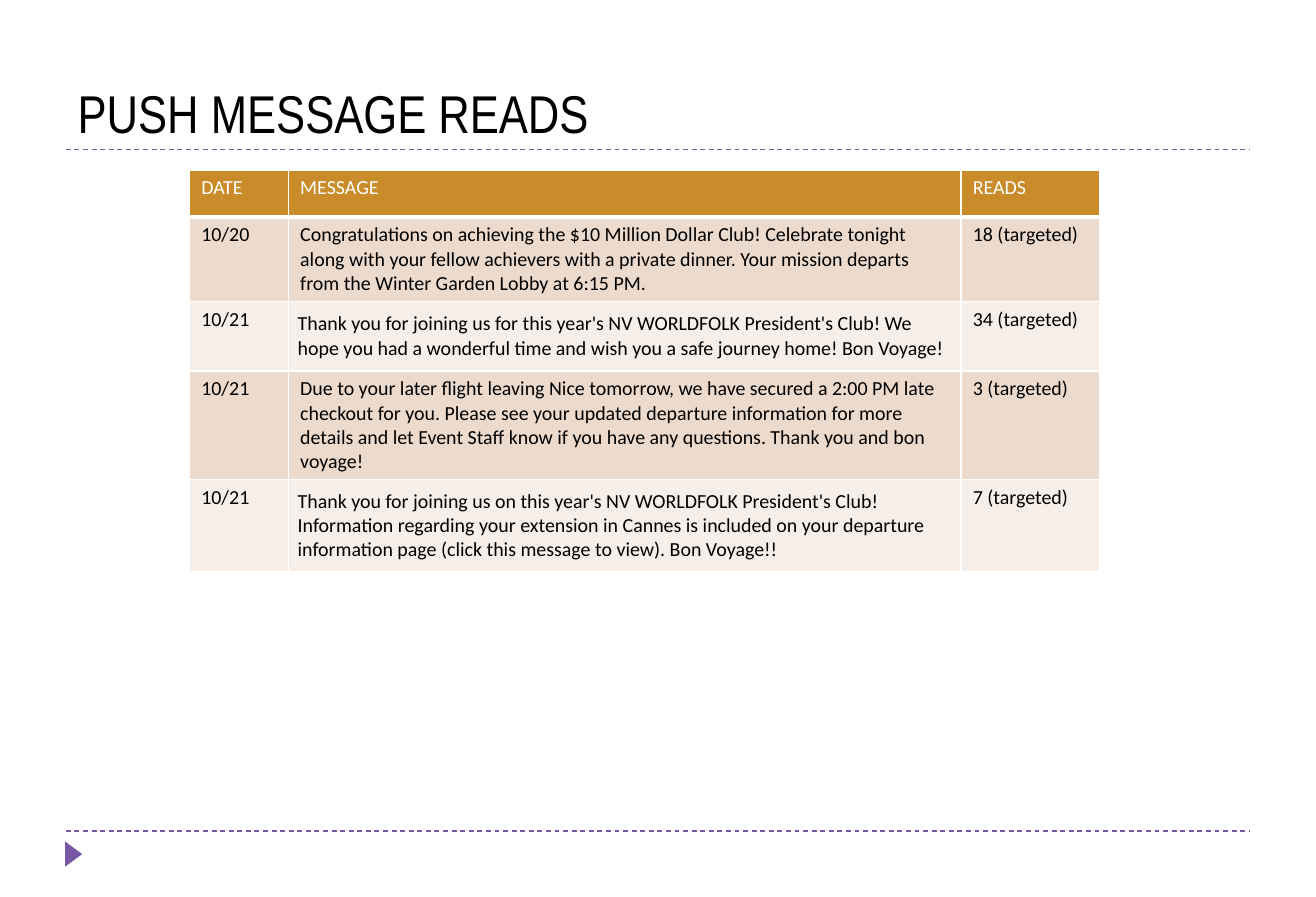
from dataclasses import dataclass

import pptx
import pptx.dml.color
import pptx.enum.dml
import pptx.enum.shapes
import pptx.enum.text
import pptx.oxml.ns
import pptx.util
from lxml import etree
from pptx.util import Cm

PURPLE = "7758A4"
GOLD = "CA8B2A"
WHITE = "FFFFFF"
BLACK = "000000"
BANDS = ("ECDACD", "F6EEE8")

RULE_LEFT, RULE_RIGHT = 1.4, 26.54
TITLE_RULE, FOOTER_RULE = 3.18, 17.65
COLUMN_WIDTHS = (2.1, 14.28, 2.95)
HEADER_HEIGHT = 1.0
HEADINGS = ("DATE", "MESSAGE", "READS")


@dataclass
class PushMessage:
    date: str
    text: str
    reads: str
    height: float
    centered: bool = False


MESSAGES = (
    PushMessage("10/20", "Congratulations on achieving the $10 Million Dollar Club! Celebrate tonight along with your fellow achievers with a private dinner. Your mission departs from the Winter Garden Lobby at 6:15 PM.", "18 (targeted)", 1.79),
    PushMessage("10/21", "Thank you for joining us for this year's NV WORLDFOLK President's Club! We hope you had a wonderful time and wish you a safe journey home! Bon Voyage!", "34 (targeted)", 1.48, centered=True),
    PushMessage("10/21", "Due to your later flight leaving Nice tomorrow, we have secured a 2:00 PM late checkout for you. Please see your updated departure information for more details and let Event Staff know if you have any questions. Thank you and bon voyage!", "3 (targeted)", 2.3),
    PushMessage("10/21", "Thank you for joining us on this year's NV WORLDFOLK President's Club! Information regarding your extension in Cannes is included on your departure information page (click this message to view). Bon Voyage!!", "7 (targeted)", 1.97, centered=True),
)


def color(value: str) -> pptx.dml.color.RGBColor:
    return pptx.dml.color.RGBColor.from_string(value)


def write_text(frame, text: str, *, size: float, font: str, fill: str) -> None:
    frame.word_wrap = True
    run = frame.paragraphs[0].add_run()
    run.text = text
    run.font.size = pptx.util.Pt(size)
    run.font.name = font
    run.font.color.rgb = color(fill)


def draw_rule(slide, top: float) -> None:
    rule = slide.shapes.add_connector(
        pptx.enum.shapes.MSO_CONNECTOR.STRAIGHT,
        Cm(RULE_LEFT), Cm(top), Cm(RULE_RIGHT), Cm(top))
    rule.line.color.rgb = color(PURPLE)
    rule.line.width = pptx.util.Pt(0.75)
    rule.line.dash_style = pptx.enum.dml.MSO_LINE.DASH
    etree.SubElement(rule._element.spPr, pptx.oxml.ns.qn("a:effectLst"))


def draw_borders(cell, widths: dict[str, float]) -> None:
    """Add white borders; widths go from edge (L, R, T, B) to points."""
    properties = cell._tc.get_or_add_tcPr()
    for edge, width in widths.items():
        line = etree.SubElement(properties, pptx.oxml.ns.qn(f"a:ln{edge}"),
                                w=str(pptx.util.Pt(width)))
        fill = etree.SubElement(line, pptx.oxml.ns.qn("a:solidFill"))
        etree.SubElement(fill, pptx.oxml.ns.qn("a:srgbClr"), val=WHITE)


def fill_cell(cell, text: str, background: str, text_color: str,
              borders: dict[str, float]) -> None:
    draw_borders(cell, borders)
    cell.fill.solid()
    cell.fill.fore_color.rgb = color(background)
    write_text(cell.text_frame, text, size=12, font="Calibri", fill=text_color)


def draw_table(slide) -> None:
    heights = [HEADER_HEIGHT] + [message.height for message in MESSAGES]
    table = slide.shapes.add_table(
        len(heights), len(COLUMN_WIDTHS), Cm(4.02), Cm(3.61),
        Cm(sum(COLUMN_WIDTHS)), Cm(sum(heights))).table
    for column, width in zip(table.columns, COLUMN_WIDTHS):
        column.width = Cm(width)
    for row, height in zip(table.rows, heights):
        row.height = Cm(height)

    for column, heading in enumerate(HEADINGS):
        fill_cell(table.cell(0, column), heading, GOLD, WHITE,
                  {"L": 1, "R": 1, "T": 1, "B": 3})
    for row, message in enumerate(MESSAGES, start=1):
        background = BANDS[(row - 1) % len(BANDS)]
        for column, text in enumerate((message.date, message.text, message.reads)):
            fill_cell(table.cell(row, column), text, background, BLACK,
                      {"L": 1, "R": 1, "B": 1})
        if message.centered:
            cell = table.cell(row, 1)
            cell.vertical_anchor = pptx.enum.text.MSO_ANCHOR.MIDDLE
            cell.margin_left = cell.margin_right = Cm(0.2)
            cell.margin_top = cell.margin_bottom = Cm(0.2)


def main() -> None:
    presentation = pptx.Presentation()
    presentation.slide_width = Cm(27.94)
    presentation.slide_height = Cm(19.05)
    slide = presentation.slides.add_slide(presentation.slide_layouts[6])

    # Rules and footer marker
    for top in (FOOTER_RULE, TITLE_RULE):
        draw_rule(slide, top)
    marker = slide.shapes.add_shape(
        pptx.enum.shapes.MSO_SHAPE.ISOSCELES_TRIANGLE,
        Cm(1.3), Cm(17.96), Cm(0.53), Cm(0.36))
    marker.rotation = 90
    marker.shadow.inherit = False
    marker.fill.solid()
    marker.fill.fore_color.rgb = color(PURPLE)
    marker.line.fill.background()

    # Title
    title = slide.shapes.add_textbox(
        Cm(RULE_LEFT), Cm(0.43), Cm(RULE_RIGHT - RULE_LEFT), Cm(TITLE_RULE - 0.43))
    title.text_frame.vertical_anchor = pptx.enum.text.MSO_ANCHOR.BOTTOM
    write_text(title.text_frame, "PUSH MESSAGE READS",
               size=32, font="Arial Narrow", fill=BLACK)

    # Message table
    draw_table(slide)
    presentation.save("out.pptx")


if __name__ == "__main__":
    main()
